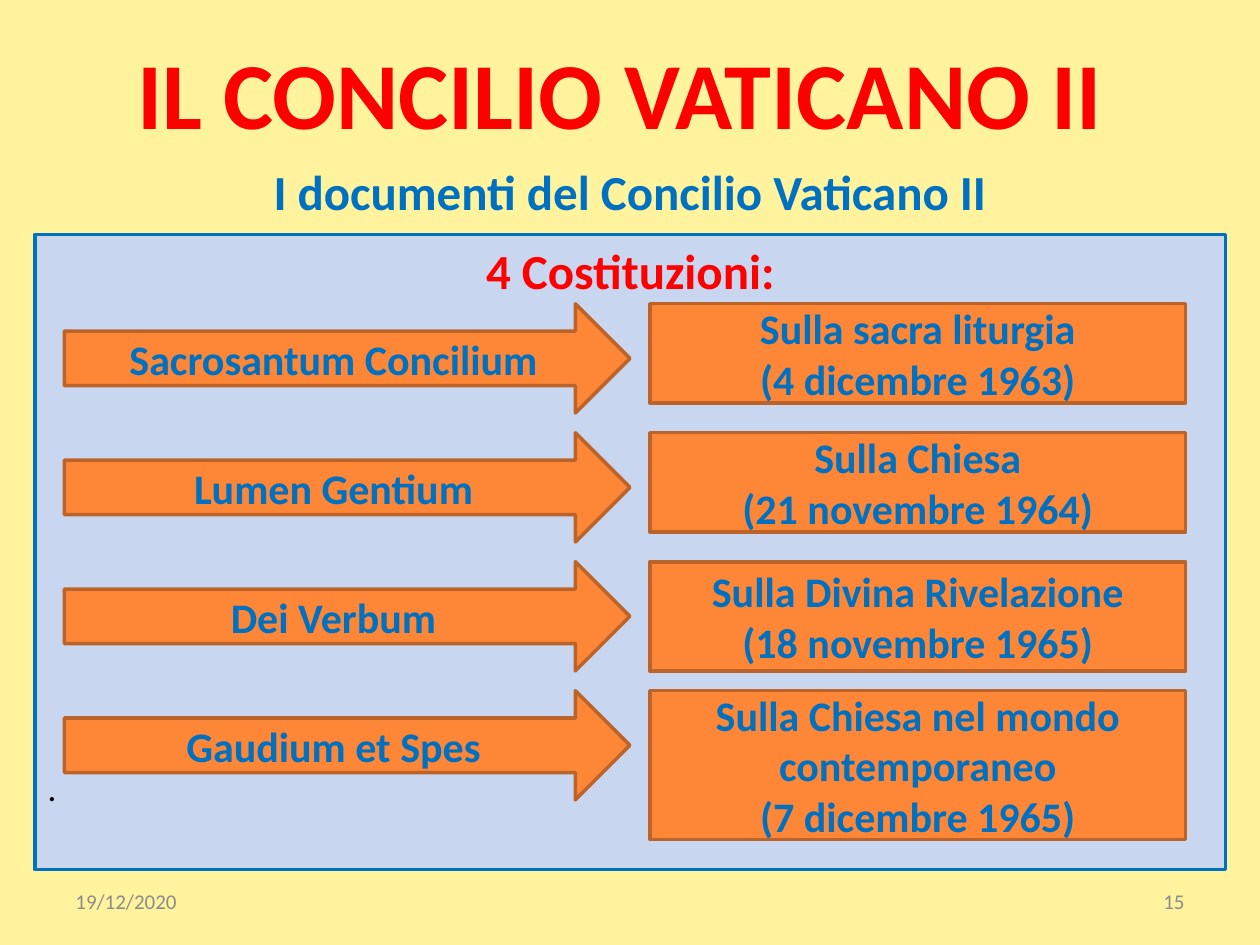
from pptx import Presentation
from pptx.dml.color import RGBColor
from pptx.enum.shapes import MSO_SHAPE as Shape
from pptx.enum.text import MSO_ANCHOR as Anchor, MSO_AUTO_SIZE as AutoSize, PP_ALIGN as Align
from pptx.util import Pt

YELLOW = RGBColor(0xFF, 0xF3, 0x9D)
RED = RGBColor(0xFF, 0x00, 0x00)
BLUE = RGBColor(0x00, 0x70, 0xC0)
PALE_BLUE = RGBColor(0xC8, 0xD6, 0xF0)
ORANGE = RGBColor(0xFE, 0x86, 0x37)
BROWN = RGBColor(0xBC, 0x63, 0x29)
GREY = RGBColor(0x8C, 0x8C, 0x8C)
BLACK = RGBColor(0x00, 0x00, 0x00)


def place(shape, left, top, width, height):
    shape.left, shape.top = Pt(left), Pt(top)
    shape.width, shape.height = Pt(width), Pt(height)


def write(shape, lines, size, color, bold=True, align=Align.CENTER, anchor=Anchor.MIDDLE):
    frame = shape.text_frame
    frame.text = "\n".join(lines)
    frame.word_wrap = True
    frame.auto_size = AutoSize.NONE
    frame.vertical_anchor = anchor
    for paragraph in frame.paragraphs:
        paragraph.alignment = align
        paragraph.space_before = Pt(0)
        font = paragraph.font
        font.name, font.size, font.bold = "Calibri", Pt(size), bold
        font.color.rgb = color


prs = Presentation()
prs.slide_width, prs.slide_height = Pt(720), Pt(540)
slide = prs.slides.add_slide(prs.slide_layouts[0])
slide.background.fill.solid()
slide.background.fill.fore_color.rgb = YELLOW

# Title
title = slide.shapes.title
place(title, 48.2, 20.9, 612, 62.6)
write(title, ["IL CONCILIO VATICANO II"], 54, RED)

# Panel with its heading and the closing full stop
panel = slide.placeholders[1]
place(panel, 20, 134, 680.4, 362.9)
panel.fill.solid()
panel.fill.fore_color.rgb = PALE_BLUE
panel.line.color.rgb = BLUE
panel.line.width = Pt(2)
write(panel, ["4 Costituzioni:", "."], 28, RED, anchor=Anchor.TOP)
full_stop = panel.text_frame.paragraphs[1]
full_stop.alignment = Align.JUSTIFY
full_stop.space_before = Pt(267)
full_stop.font.size = Pt(20)
full_stop.font.bold = False
full_stop.font.color.rgb = BLACK

# Subtitle, date and slide number
captions = [
    ("I documenti del Concilio Vaticano II", (76.3, 88.6, 567, 41), 28, BLUE, True, Align.CENTER),
    ("19/12/2020", (36, 500.5, 168, 28.8), 12, GREY, False, Align.LEFT),
    ("15", (516, 500.5, 168, 28.8), 12, GREY, False, Align.RIGHT),
]
for text, box, size, color, bold, align in captions:
    caption = slide.shapes.add_textbox(*map(Pt, box))
    write(caption, [text], size, color, bold, align)

# The four constitutions: an arrow with the name, a box with subject and date
constitutions = [
    ("Sacrosantum Concilium", ["Sulla sacra liturgia", "(4 dicembre 1963)"], 56.7),
    ("Lumen Gentium", ["Sulla Chiesa", "(21 novembre 1964)"], 56.7),
    ("Dei Verbum", ["Sulla Divina Rivelazione", "(18 novembre 1965)"], 62.4),
    ("Gaudium et Spes", ["Sulla Chiesa nel mondo contemporaneo", "(7 dicembre 1965)"], 85),
]
FIRST_TOP, PITCH = 173.6, 73.7
for row, (name, subject, subject_height) in enumerate(constitutions):
    top = FIRST_TOP + row * PITCH
    for preset, lines, left, width, height in (
        (Shape.RIGHT_ARROW, [name], 36.8, 323.2, 62.4),
        (Shape.RECTANGLE, subject, 371.4, 306.2, subject_height),
    ):
        block = slide.shapes.add_shape(preset, Pt(left), Pt(top), Pt(width), Pt(height))
        block.shadow.inherit = False
        block.fill.solid()
        block.fill.fore_color.rgb = ORANGE
        block.line.color.rgb = BROWN
        block.line.width = Pt(2)
        write(block, lines, 24, BLUE)

prs.save("out.pptx")
